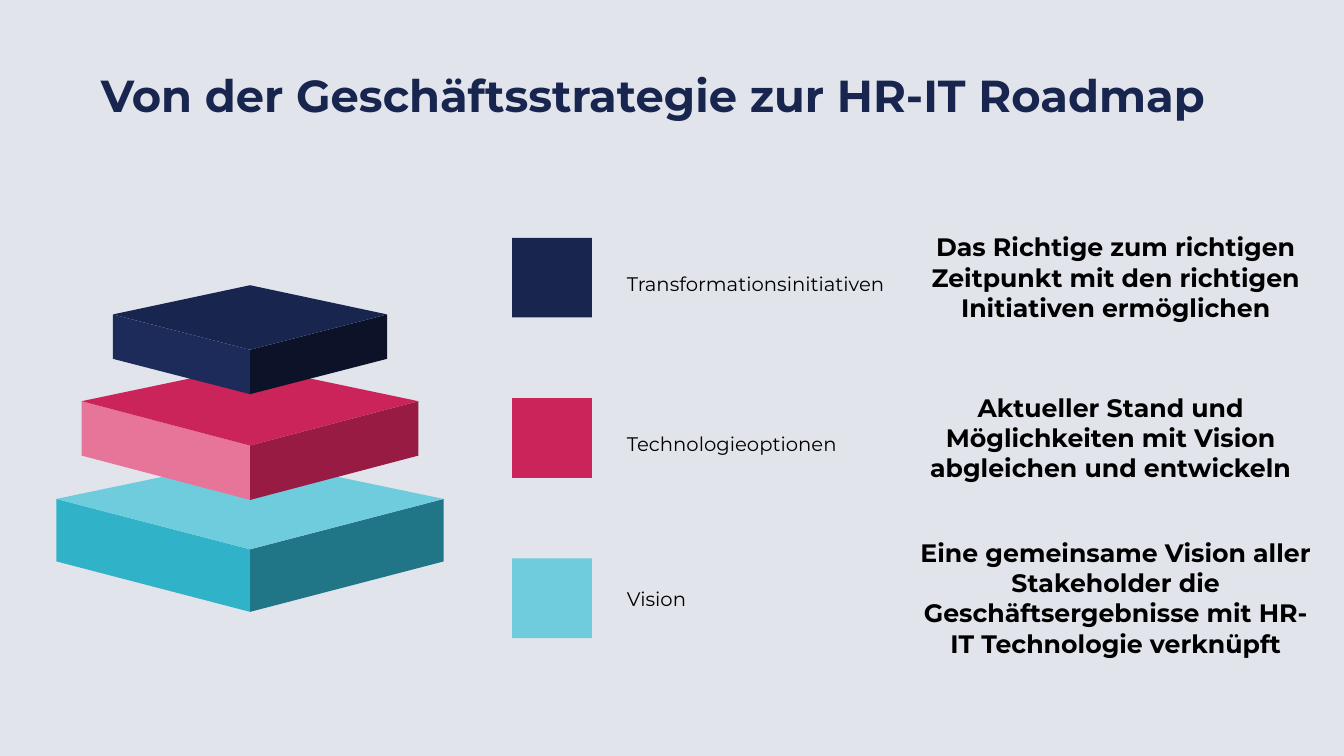
from pptx import Presentation
from pptx.dml.color import RGBColor
from pptx.enum.shapes import MSO_SHAPE
from pptx.enum.text import MSO_ANCHOR, MSO_AUTO_SIZE, PP_ALIGN
from pptx.util import Inches, Pt

FONT = "Montserrat"
COLORS = {
    "background": "E2E4EB", "text": "000000",
    "navy": "18254F", "navy_left": "1C2B5A", "navy_right": "0C1228",
    "pink": "CB245B", "pink_left": "E7759A", "pink_right": "981B44",
    "teal": "6FCCDD", "teal_left": "30B2C9", "teal_right": "207686",
}


def paint(shape, color):
    shape.fill.solid()
    shape.fill.fore_color.rgb = RGBColor.from_string(COLORS[color])
    shape.line.fill.background()
    shape.shadow.inherit = False


def write(shape, text, size, color="text", bold=False,
          align=PP_ALIGN.LEFT, anchor=MSO_ANCHOR.MIDDLE, spacing=1.0):
    frame = shape.text_frame
    frame.word_wrap = True
    frame.auto_size = MSO_AUTO_SIZE.NONE
    frame.vertical_anchor = anchor
    paragraph = frame.paragraphs[0]
    paragraph.alignment = align
    paragraph.line_spacing = spacing
    run = paragraph.add_run()
    run.text = text
    run.font.name = FONT
    run.font.size = Pt(size)
    run.font.bold = bold
    run.font.color.rgb = RGBColor.from_string(COLORS[color])


presentation = Presentation()
presentation.slide_width = Inches(13.33)
presentation.slide_height = Inches(7.5)
slide = presentation.slides.add_slide(presentation.slide_layouts[5])
shapes = slide.shapes
slide.background.fill.solid()
slide.background.fill.fore_color.rgb = RGBColor.from_string(COLORS["background"])

# Title
title = shapes.title
title.left, title.top = Inches(0.9), Inches(0.71)
title.width, title.height = Inches(12.2), Inches(0.52)
write(title, "Von der Geschäftsstrategie zur HR-IT Roadmap", 32, "navy",
      bold=True, spacing=0.9)

# Stacked slabs, bottom to top: colour, half width, back, side and front y, depth
CENTER = 2.48
slabs = [
    ("teal", 1.92, 4.55, 4.95, 5.45, 0.62),
    ("pink", 1.67, 3.63, 3.98, 4.42, 0.54),
    ("navy", 1.36, 2.83, 3.12, 3.47, 0.44),
]
for color, half, back, side, front, depth in slabs:
    left, right = CENTER - half, CENTER + half
    faces = [(f"{color}_{name}", [(x, side), (CENTER, front),
                                  (CENTER, front + depth), (x, side + depth)])
             for name, x in (("left", left), ("right", right))]
    faces.append((color, [(left, side), (CENTER, back),
                          (right, side), (CENTER, front)]))
    for face_color, corners in faces:
        points = [(Inches(x), Inches(y)) for x, y in corners]
        builder = shapes.build_freeform(*points[0])
        builder.add_line_segments(points[1:], close=True)
        paint(builder.convert_to_shape(), face_color)

# Legend rows: colour, label, label spacing, statement, its left, top and height
rows = [
    ("navy", "Transformationsinitiativen", 1.5,
     "Das Richtige zum richtigen Zeitpunkt mit den richtigen Initiativen ermöglichen",
     8.99, 2.25, 1.01),
    ("pink", "Technologieoptionen", 1.5,
     "Aktueller Stand und Möglichkeiten mit Vision abgleichen und entwickeln",
     8.94, 3.84, 1.01),
    ("teal", "Vision", 1.0,
     "Eine gemeinsame Vision aller Stakeholder die Geschäftsergebnisse mit HR-IT "
     "Technologie verknüpft",
     8.99, 5.28, 1.31),
]
SIDE = Inches(0.79)
for index, (color, label, spacing, statement, left, top, height) in enumerate(rows):
    row_top = Inches(2.36 + 1.59 * index)
    square = shapes.add_shape(MSO_SHAPE.RECTANGLE, Inches(5.08), row_top, SIDE, SIDE)
    paint(square, color)
    label_box = shapes.add_textbox(Inches(6.12), row_top, Inches(5.86), SIDE)
    write(label_box, label, 14, spacing=spacing)
    statement_box = shapes.add_textbox(Inches(left), Inches(top),
                                       Inches(4.15), Inches(height))
    write(statement_box, statement, 18, bold=True,
          align=PP_ALIGN.CENTER, anchor=MSO_ANCHOR.TOP)

presentation.save("out.pptx")
